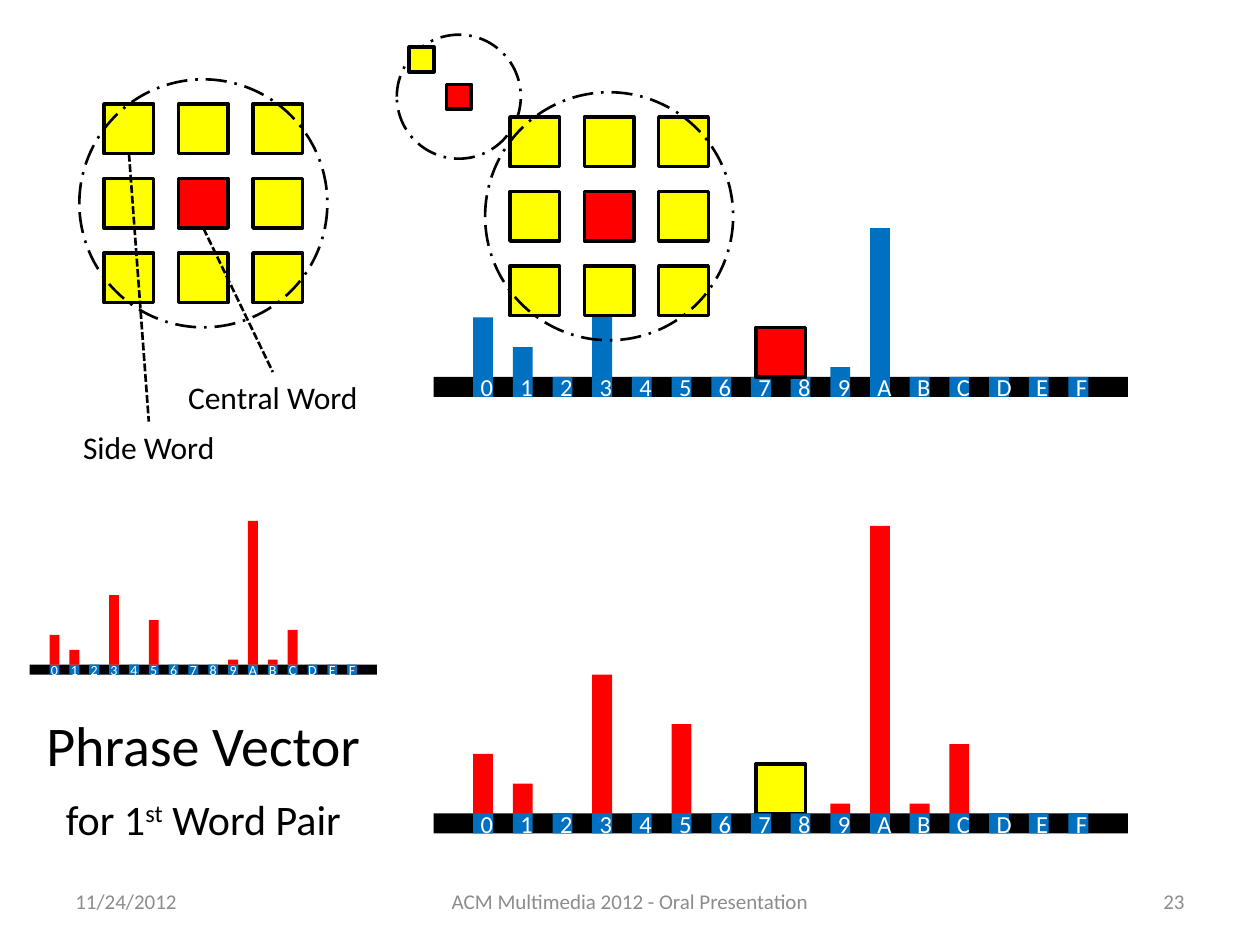
from dataclasses import dataclass

from lxml import etree
from pptx import Presentation
from pptx.dml.color import RGBColor
from pptx.enum.dml import MSO_LINE
from pptx.enum.shapes import MSO_CONNECTOR, MSO_SHAPE
from pptx.enum.text import MSO_ANCHOR, PP_ALIGN
from pptx.oxml.ns import qn
from pptx.util import Cm, Pt

RECT, OVAL = MSO_SHAPE.RECTANGLE, MSO_SHAPE.OVAL
STRAIGHT = MSO_CONNECTOR.STRAIGHT
RING_DASH, LEADER_DASH = MSO_LINE.LONG_DASH_DOT, MSO_LINE.SQUARE_DOT
LEFT, CENTER, RIGHT = PP_ALIGN.LEFT, PP_ALIGN.CENTER, PP_ALIGN.RIGHT
MIDDLE = MSO_ANCHOR.MIDDLE
TOP_SITE, BOTTOM_SITE = 0, 2

WORDS = "0123456789ABCDEF"
CENTRE_CELL = (1, 1)
ALL_CELLS = [(row, col) for row in range(3) for col in range(3)]
CENTRAL_COUNTS = {"0": 6, "1": 3, "3": 10, "9": 1, "A": 15}
PHRASE_COUNTS = {"0": 6, "1": 3, "3": 14, "5": 9, "9": 1, "A": 29, "B": 1, "C": 7}


@dataclass(frozen=True)
class Theme:
    """Colours, font and type sizes of the slide."""

    font: str = "Calibri"
    ink: RGBColor = RGBColor(0, 0, 0)
    paper: RGBColor = RGBColor(255, 255, 255)
    central: RGBColor = RGBColor(255, 0, 0)
    side: RGBColor = RGBColor(255, 255, 0)
    word: RGBColor = RGBColor(0, 0x70, 0xC0)
    muted: RGBColor = RGBColor(0x8C, 0x8C, 0x8C)
    title: int = 32
    subtitle: int = 24
    label: int = 18
    axis: int = 14
    footer: int = 12
    small_axis: int = 8
    box_line: float = 2
    dash_line: float = 1.5


class Board:
    """Draws the slide's elements in one theme, with lengths in centimetres."""

    def __init__(self, slide, theme):
        self.shapes, self.theme = slide.shapes, theme

    def add_runs(self, frame, runs, size, color, align):
        """Add runs of (text, baseline) as one paragraph."""
        frame.word_wrap = True
        frame.vertical_anchor = MIDDLE
        paragraph = frame.paragraphs[0]
        paragraph.alignment = align
        for text, baseline in runs:
            run = paragraph.add_run()
            run.text = text
            run.font.name, run.font.size = self.theme.font, Pt(size)
            run.font.color.rgb = color
            if baseline:
                run._r.get_or_add_rPr().set("baseline", str(baseline))

    def text(self, left, top, width, height, runs, size, color, align=CENTER):
        """Add a text box."""
        box = self.shapes.add_textbox(Cm(left), Cm(top), Cm(width), Cm(height))
        self.add_runs(box.text_frame, runs, size, color, align)
        return box

    def block(self, left, top, width, height, fill, parent=None):
        """Add a borderless filled rectangle."""
        block = (parent or self).shapes.add_shape(
            RECT, Cm(left), Cm(top), Cm(width), Cm(height))
        block.shadow.inherit = False
        block.fill.solid()
        block.fill.fore_color.rgb = fill
        block.line.fill.background()
        return block

    def square(self, left, top, side, fill, parent=None):
        """Add an outlined word square."""
        square = self.block(left, top, side, side, fill, parent)
        square.line.color.rgb = self.theme.ink
        square.line.width = Pt(self.theme.box_line)
        return square

    def ring(self, left, top, cell):
        """Add the dashed ring around a neighbourhood."""
        ring = self.shapes.add_shape(OVAL, Cm(left), Cm(top), Cm(5 * cell), Cm(5 * cell))
        ring.shadow.inherit = False
        ring.fill.background()
        ring.line.color.rgb = self.theme.ink
        ring.line.width = Pt(self.theme.dash_line)
        ring.line.dash_style = RING_DASH

    def neighbourhood(self, left, top, cell, cells):
        """Add the word squares inside a ring and return them by cell."""
        group = self.shapes.add_group_shape()
        squares = {}
        for row, col in cells:
            fill = self.theme.central if (row, col) == CENTRE_CELL else self.theme.side
            squares[row, col] = self.square(
                left + cell * (0.5 + 1.5 * col), top + cell * (0.5 + 1.5 * row),
                cell, fill, group)
        return squares

    def histogram(self, left, top, cell, counts, color, size):
        """Add a word axis with a bar for each counted word."""
        group = self.shapes.add_group_shape()
        self.block(left, top, 35 * cell, cell, self.theme.ink, group)
        for index, word in enumerate(WORDS):
            x = left + 2 * cell * (index + 1)
            tick = self.block(x, top, cell, cell, self.theme.word, group)
            self.add_runs(tick.text_frame, [(word, 0)], size, self.theme.paper, CENTER)
            if word in counts:
                height = counts[word] * cell / 2
                self.block(x, top - height, cell, height, color, group)

    def leader(self, square, label):
        """Join a square's bottom to a label's top with a dashed line."""
        line = self.shapes.add_connector(STRAIGHT, 0, 0, 0, 0)
        line.begin_connect(square, BOTTOM_SITE)
        line.end_connect(label, TOP_SITE)
        line.line.color.rgb = self.theme.ink
        line.line.width = Pt(self.theme.dash_line)
        line.line.dash_style = LEADER_DASH
        etree.SubElement(line._element.spPr, qn("a:effectLst"))


def main():
    """Build the phrase vector slide."""
    deck = Presentation()
    deck.slide_width, deck.slide_height = Cm(25.4), Cm(19.05)
    theme = Theme()
    board = Board(deck.slides.add_slide(deck.slide_layouts[6]), theme)

    words = board.neighbourhood(1.6, 1.6, 1, ALL_CELLS)
    board.ring(1.6, 1.6, 1)
    board.ring(8, 0.7, 0.5)
    board.histogram(8.74, 7.6, 0.4, CENTRAL_COUNTS, theme.word, theme.axis)
    board.square(15.24, 6.6, 1, theme.central)
    board.neighbourhood(8, 0.7, 0.5, [CENTRE_CELL, (0, 0)])
    board.square(15.24, 15.4, 1, theme.side)
    board.histogram(8.74, 16.4, 0.4, PHRASE_COUNTS, theme.central, theme.axis)
    board.histogram(0.6, 13.4, 0.2, PHRASE_COUNTS, theme.central, theme.small_axis)

    board.text(0.1, 14, 8, 2, [("Phrase Vector", 0)], theme.title, theme.ink)
    board.text(0.1, 15.5, 8, 2, [("for 1", 0), ("st", 30000), (" Word Pair", 0)],
               theme.subtitle, theme.ink)

    board.neighbourhood(9.78, 1.86, 1, ALL_CELLS)
    board.ring(9.78, 1.86, 1)

    central_label = board.text(3, 7.5, 5, 1, [("Central Word", 0)], theme.label, theme.ink)
    side_label = board.text(0.5, 8.5, 5, 1, [("Side Word", 0)], theme.label, theme.ink)
    board.leader(words[CENTRE_CELL], central_label)
    board.leader(words[0, 0], side_label)

    for left, width, content, align in (
        (1.27, 5.93, "11/24/2012", LEFT),
        (8.68, 8.04, "ACM Multimedia 2012 - Oral Presentation", CENTER),
        (18.2, 5.93, "23", RIGHT),
    ):
        board.text(left, 17.66, width, 1.01, [(content, 0)], theme.footer, theme.muted, align)

    deck.save("out.pptx")


if __name__ == "__main__":
    main()
